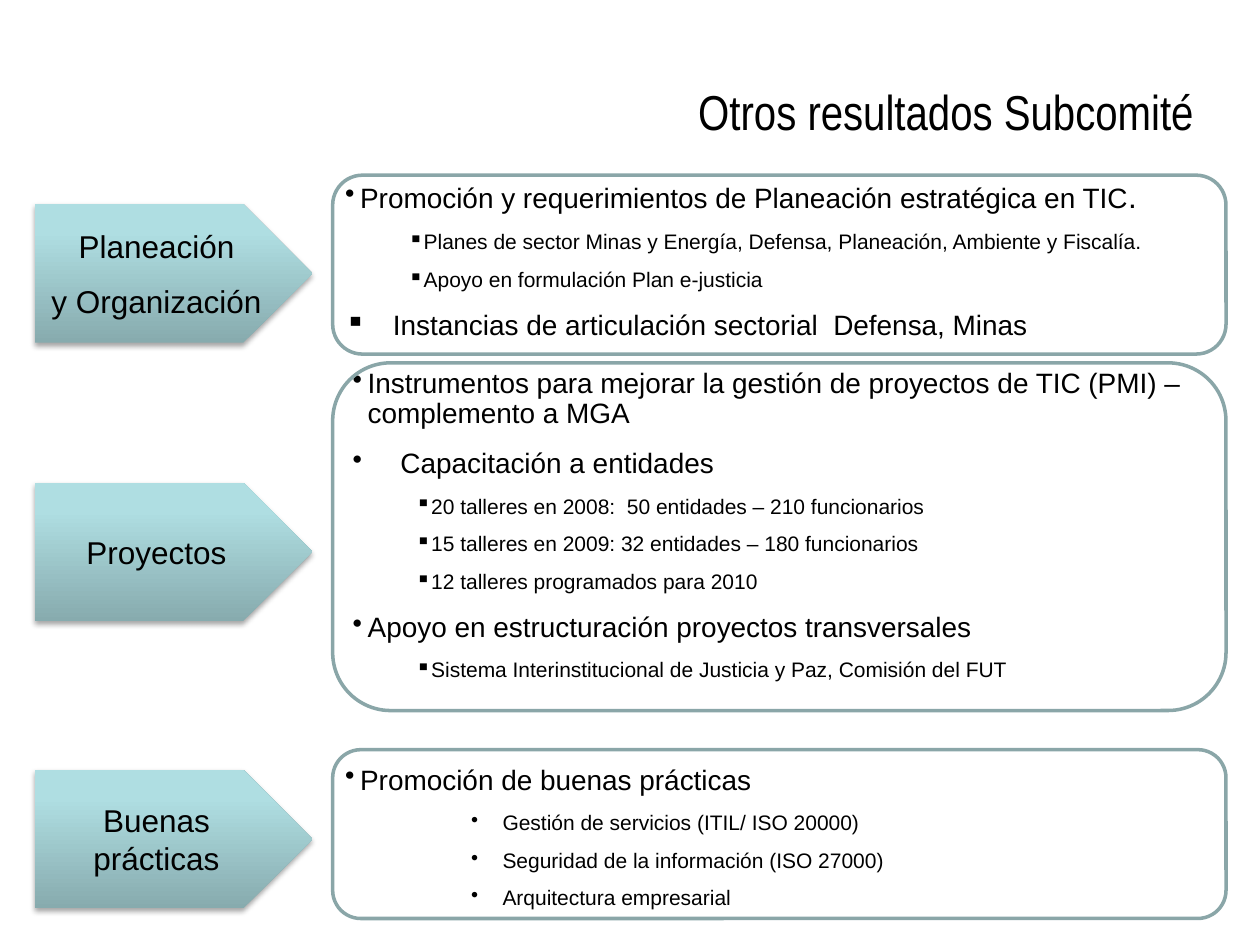
from copy import deepcopy
from dataclasses import dataclass

import pptx
import pptx.dml.color
import pptx.enum.shapes
import pptx.enum.text
import pptx.oxml
import pptx.oxml.ns
import pptx.util
from pptx.util import Inches

COLORS = {
    "text": "000000",
    "border": "8AA6A8",
    "dark": "87ABAE",
    "mid": "AFDEE2",
    "light": "AFE0E4",
}
STOPS = [(0, "dark"), (0.8, "mid"), (1, "light")]
SHADOW = (
    '<a:effectLst xmlns:a="http://schemas.openxmlformats.org/drawingml/2006/main">'
    '<a:outerShdw blurRad="39370" dist="22860" dir="5400000" rotWithShape="0">'
    '<a:srgbClr val="000000"><a:alpha val="35000"/></a:srgbClr>'
    "</a:outerShdw></a:effectLst>"
)
ALIGN = pptx.enum.text.PP_ALIGN
SHAPE = pptx.enum.shapes.MSO_SHAPE
qn = pptx.oxml.ns.qn


@dataclass(frozen=True)
class Style:
    level: int
    left: float
    hang: float
    mark: str
    size: int


MAIN = Style(1, 0.12, 0.12, "•", 16)
WIDE = Style(0, 0.38, 0.38, "•", 16)
SQUARE = Style(0, 0.38, 0.38, "▪", 16)
SUB = Style(2, 0.62, 0.12, "▪", 12)
DEEP = Style(2, 1.25, 0.25, "•", 12)


@dataclass(frozen=True)
class Item:
    style: Style
    text: str
    end: str = ""  # closing mark set at 18 pt


@dataclass(frozen=True)
class Block:
    label: list[str]
    arrow_top: float
    frame_top: float
    frame_high: float
    text_at: tuple[float, float, float, float]
    items: list[Item]


BLOCKS = [
    Block(["Planeación", "y Organización"], 1.62, 1.39, 1.42, (2.64, 1.39, 7.36, 1.41), [
        Item(MAIN, "Promoción y requerimientos de Planeación estratégica en TIC", "."),
        Item(SUB, "Planes de sector Minas y Energía, Defensa, Planeación, Ambiente y Fiscalía."),
        Item(SUB, "Apoyo en formulación Plan e-justicia"),
        Item(SQUARE, "Instancias de articulación sectorial  Defensa, Minas"),
    ]),
    Block(["Proyectos"], 3.83, 2.88, 2.76, (2.7, 2.88, 7.34, 2.67), [
        Item(MAIN, "Instrumentos para mejorar la gestión de proyectos de TIC (PMI) – complemento a MGA"),
        Item(WIDE, "Capacitación a entidades"),
        Item(SUB, "20 talleres en 2008:  50 entidades – 210 funcionarios"),
        Item(SUB, "15 talleres en 2009: 32 entidades – 180 funcionarios"),
        Item(SUB, "12 talleres programados para 2010"),
        Item(MAIN, "Apoyo en estructuración proyectos transversales"),
        Item(SUB, "Sistema Interinstitucional de Justicia y Paz, Comisión del FUT"),
    ]),
    Block(["Buenas prácticas"], 6.11, 5.95, 1.34, (2.64, 6.03, 7.4, 1.28), [
        Item(MAIN, "Promoción de buenas prácticas"),
        Item(DEEP, "Gestión de servicios (ITIL/ ISO 20000)"),
        Item(DEEP, "Seguridad de la información (ISO 27000)"),
        Item(DEEP, "Arquitectura empresarial"),
    ]),
]


def color(name: str) -> pptx.dml.color.RGBColor:
    return pptx.dml.color.RGBColor.from_string(COLORS[name])


def style_run(run, size: float, font: str = "Arial") -> None:
    run.font.size = pptx.util.Pt(size)
    run.font.name = font
    run.font.color.rgb = color("text")


def add_lines(frame, count: int) -> list:
    """Return count paragraphs, reusing the one the frame starts with."""
    return [frame.paragraphs[0]] + [frame.add_paragraph() for _ in range(count - 1)]


def add_text(slide, at: tuple[float, float, float, float]):
    frame = slide.shapes.add_textbox(*map(Inches, at)).text_frame
    frame.word_wrap = True
    return frame


def draw_arrow(slide, top: float, label: list[str]) -> None:
    arrow = slide.shapes.add_shape(
        SHAPE.PENTAGON, Inches(0.28), Inches(top), Inches(2.2), Inches(1.1))
    arrow.line.fill.background()
    arrow.fill.gradient()
    arrow.fill.gradient_angle = 90
    props = arrow._element.spPr
    stops = props.find(".//" + qn("a:gsLst"))
    stops.append(deepcopy(stops[-1]))
    for stop, (place, name) in zip(arrow.fill.gradient_stops, STOPS):
        stop.position = place
        stop.color.rgb = color(name)
    props.append(pptx.oxml.parse_xml(SHADOW))

    frame = arrow.text_frame
    frame.vertical_anchor = pptx.enum.text.MSO_ANCHOR.MIDDLE
    for row, (line, text) in enumerate(zip(add_lines(frame, len(label)), label)):
        line.text = text
        line.alignment = ALIGN.CENTER
        if row:
            line.space_before = pptx.util.Pt(10)
        style_run(line.runs[0], 18)


def draw_list(slide, at: tuple[float, float, float, float], items: list[Item]) -> None:
    frame = add_text(slide, at)
    for row, (line, item) in enumerate(zip(add_lines(frame, len(items)), items)):
        style = item.style
        line.text = item.text
        line.level = style.level
        line.line_spacing = 0.9
        if row:
            line.space_before = pptx.util.Pt(round(style.size * 0.57, 1))
        line.space_after = pptx.util.Pt(round(style.size * 0.15, 1))
        props = line._p.get_or_add_pPr()
        props.set("marL", str(Inches(style.left)))
        props.set("indent", str(-Inches(style.hang)))
        mark = props.makeelement(qn("a:buChar"), {"char": style.mark})
        props.append(mark)
        style_run(line.runs[0], style.size)
        if item.end:
            end = line.add_run()
            end.text = item.end
            style_run(end, 18)


def draw_frame(slide, top: float, high: float) -> None:
    frame = slide.shapes.add_shape(
        SHAPE.ROUNDED_RECTANGLE, Inches(2.64), Inches(top), Inches(7.09), Inches(high))
    frame.shadow.inherit = False
    frame.fill.background()
    frame.line.color.rgb = color("border")
    frame.line.width = pptx.util.Pt(2)


def draw_title(slide) -> None:
    line = add_text(slide, (3.11, 0.6, 6.46, 0.57)).paragraphs[0]
    line.text = "Otros resultados Subcomité"
    line.alignment = ALIGN.RIGHT
    style_run(line.runs[0], 28, "Arial Narrow")


def main() -> None:
    deck = pptx.Presentation()
    deck.slide_width, deck.slide_height = Inches(10), Inches(7.5)
    slide = deck.slides.add_slide(deck.slide_layouts[6])
    for block in BLOCKS:
        draw_arrow(slide, block.arrow_top, block.label)
    for block in BLOCKS:
        draw_list(slide, block.text_at, block.items)
    for block in BLOCKS:
        draw_frame(slide, block.frame_top, block.frame_high)
    draw_title(slide)
    deck.save("out.pptx")


if __name__ == "__main__":
    main()
